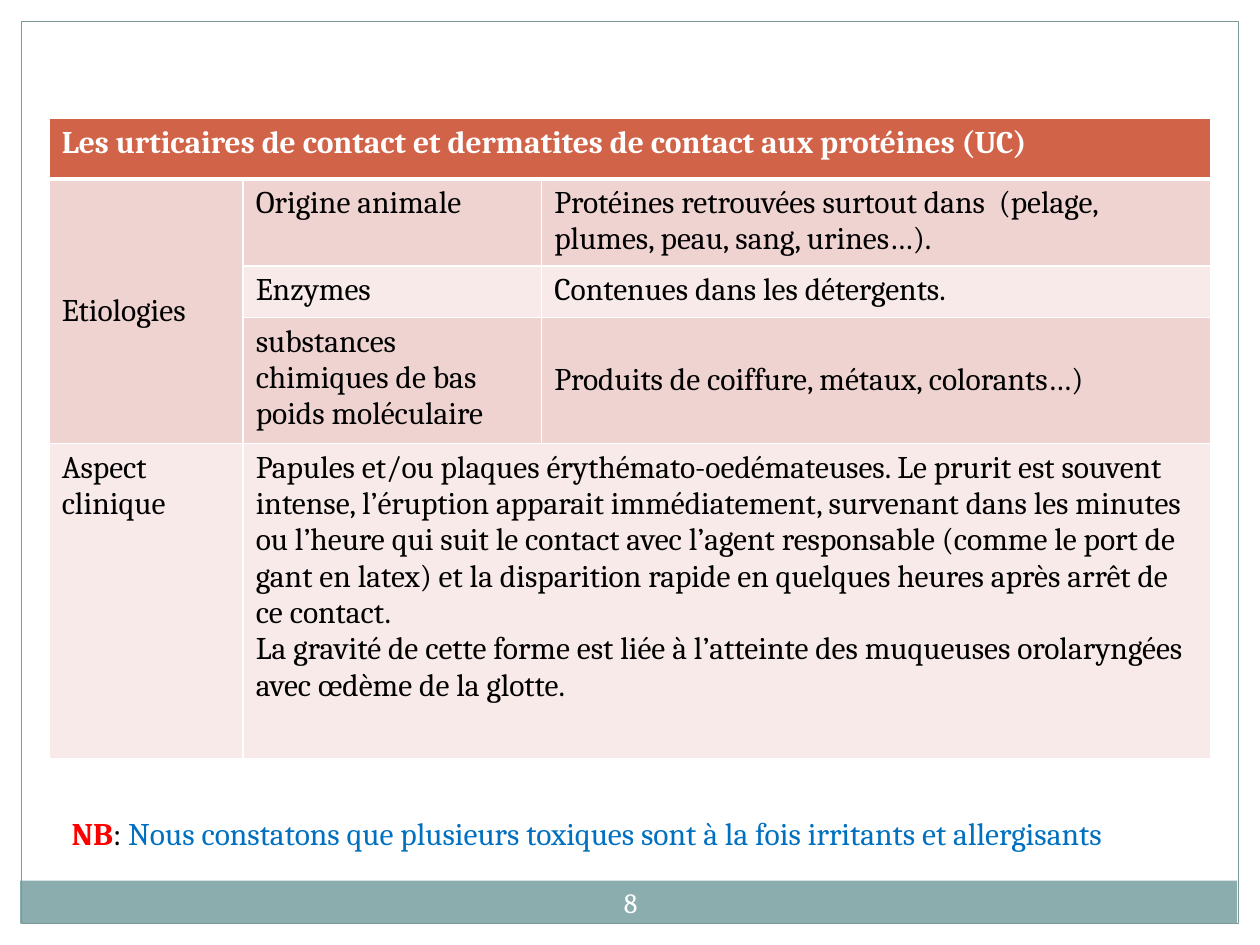
from lxml import etree
from pptx import Presentation
from pptx.dml.color import RGBColor
from pptx.enum.shapes import MSO_SHAPE
from pptx.enum.text import MSO_ANCHOR, PP_ALIGN
from pptx.oxml.ns import qn
from pptx.util import Inches, Pt

RECTANGLE = MSO_SHAPE.RECTANGLE
TOP, MIDDLE = MSO_ANCHOR.TOP, MSO_ANCHOR.MIDDLE
CENTER = PP_ALIGN.CENTER

COLORS = {
    "white": "FFFFFF", "black": "000000", "red": "FF0000", "blue": "0070C0",
    "band": "8CADAE", "frame": "7C999A",
    "header": "D16349", "dark": "EED3D0", "light": "F7EAE9",
}
BODY = {"name": "Cambria", "size": Pt(18), "bold": False}
STRONG = {**BODY, "bold": True}
NUMBER = {**BODY, "size": Pt(16)}


def color(key):
    return RGBColor.from_string(COLORS[key])


def add_text(paragraph, text, look, key):
    run = paragraph.add_run()
    run.text = text
    for attribute, value in look.items():
        setattr(run.font, attribute, value)
    run.font.color.rgb = color(key)


prs = Presentation()
prs.slide_width, prs.slide_height = Inches(10), Inches(7.5)
slide = prs.slides.add_slide(prs.slide_layouts[6])

for left, top, width, height, fill, outline in [
    (0, 0, 10, 0.17, "white", None),
    (9.83, 0, 0.17, 7.5, "white", None),
    (0, 0, 0.17, 7.5, "white", None),
    (0.16, 6.99, 9.66, 0.34, "band", None),
    (0.17, 0.17, 9.66, 7.16, None, "frame"),
]:
    border_part = slide.shapes.add_shape(
        RECTANGLE, Inches(left), Inches(top), Inches(width), Inches(height))
    border_part.shadow.inherit = False
    if fill:
        border_part.fill.solid()
        border_part.fill.fore_color.rgb = color(fill)
    else:
        border_part.fill.background()
    if outline:
        border_part.line.color.rgb = color(outline)
        border_part.line.width = Pt(0.75)
    else:
        border_part.line.fill.background()

column_widths = [1.54, 2.37, 5.31]
row_heights = [0.48, 0.69, 0.41, 1, 2.5]
row_fills = ["header", "dark", "light", "dark", "light"]
urticaria = slide.shapes.add_table(
    len(row_heights), len(column_widths), Inches(0.39), Inches(0.94),
    Inches(sum(column_widths)), Inches(sum(row_heights))).table
for column, width in zip(urticaria.columns, column_widths):
    column.width = Inches(width)
for row, height, fill in zip(urticaria.rows, row_heights, row_fills):
    row.height = Inches(height)
    for cell in row.cells:
        properties = cell._tc.get_or_add_tcPr()
        for side in ("lnL", "lnR", "lnT", "lnB"):
            thick = (fill, side) == ("header", "lnB")
            edge = etree.SubElement(properties, qn(f"a:{side}"), w=str(Pt(3 if thick else 1)))
            paint = etree.SubElement(edge, qn("a:solidFill"))
            etree.SubElement(paint, qn("a:srgbClr"), val=COLORS["white"])
        cell.fill.solid()
        cell.fill.fore_color.rgb = color(fill)
for first, last in [((0, 0), (0, 2)), ((1, 0), (3, 0)), ((4, 1), (4, 2))]:
    urticaria.cell(*first).merge(urticaria.cell(*last))

entries = [
    (0, 0, TOP, ["Les urticaires de contact et dermatites de contact aux protéines (UC)"]),
    (1, 0, MIDDLE, ["Etiologies"]),
    (1, 1, TOP, ["Origine animale"]),
    (1, 2, TOP, ["Protéines retrouvées surtout dans  (pelage, plumes, peau, sang, urines…)."]),
    (2, 1, TOP, ["Enzymes"]),
    (2, 2, TOP, ["Contenues dans les détergents."]),
    (3, 1, TOP, ["substances chimiques de bas poids moléculaire"]),
    (3, 2, MIDDLE, ["Produits de coiffure, métaux, colorants…)"]),
    (4, 0, TOP, ["Aspect clinique"]),
    (4, 1, TOP, [
        "Papules et/ou plaques érythémato-oedémateuses. Le prurit est souvent "
        "intense, l’éruption apparait immédiatement, survenant dans les minutes "
        "ou l’heure qui suit le contact avec l’agent responsable (comme le port de "
        "gant en latex) et la disparition rapide en quelques heures après arrêt de "
        "ce contact.",
        "La gravité de cette forme est liée à l’atteinte des muqueuses orolaryngées "
        "avec œdème de la glotte.",
    ]),
]
for row, column, anchor, paragraphs in entries:
    cell = urticaria.cell(row, column)
    cell.vertical_anchor = anchor
    look, key = (STRONG, "white") if row == 0 else (BODY, "black")
    for index, text in enumerate(paragraphs):
        frame = cell.text_frame
        paragraph = frame.add_paragraph() if index else frame.paragraphs[0]
        add_text(paragraph, text, look, key)

page_number = slide.shapes.add_textbox(
    Inches(4.67), Inches(6.92), Inches(0.67), Inches(0.48)).text_frame
page_number.word_wrap = True
page_number.vertical_anchor = MIDDLE
for side in ("left", "top", "right", "bottom"):
    setattr(page_number, f"margin_{side}", Inches(0.05))
page_number.paragraphs[0].alignment = CENTER
add_text(page_number.paragraphs[0], "8", NUMBER, "white")

remark = slide.shapes.add_textbox(
    Inches(0.47), Inches(6.41), Inches(9.21), Inches(0.4)).text_frame
remark.word_wrap = True
for text, look, key in [
    ("NB", STRONG, "red"),
    (": ", BODY, "black"),
    ("Nous constatons que plusieurs toxiques sont à la fois irritants et allergisants",
     BODY, "blue"),
]:
    add_text(remark.paragraphs[0], text, look, key)

prs.save("out.pptx")
